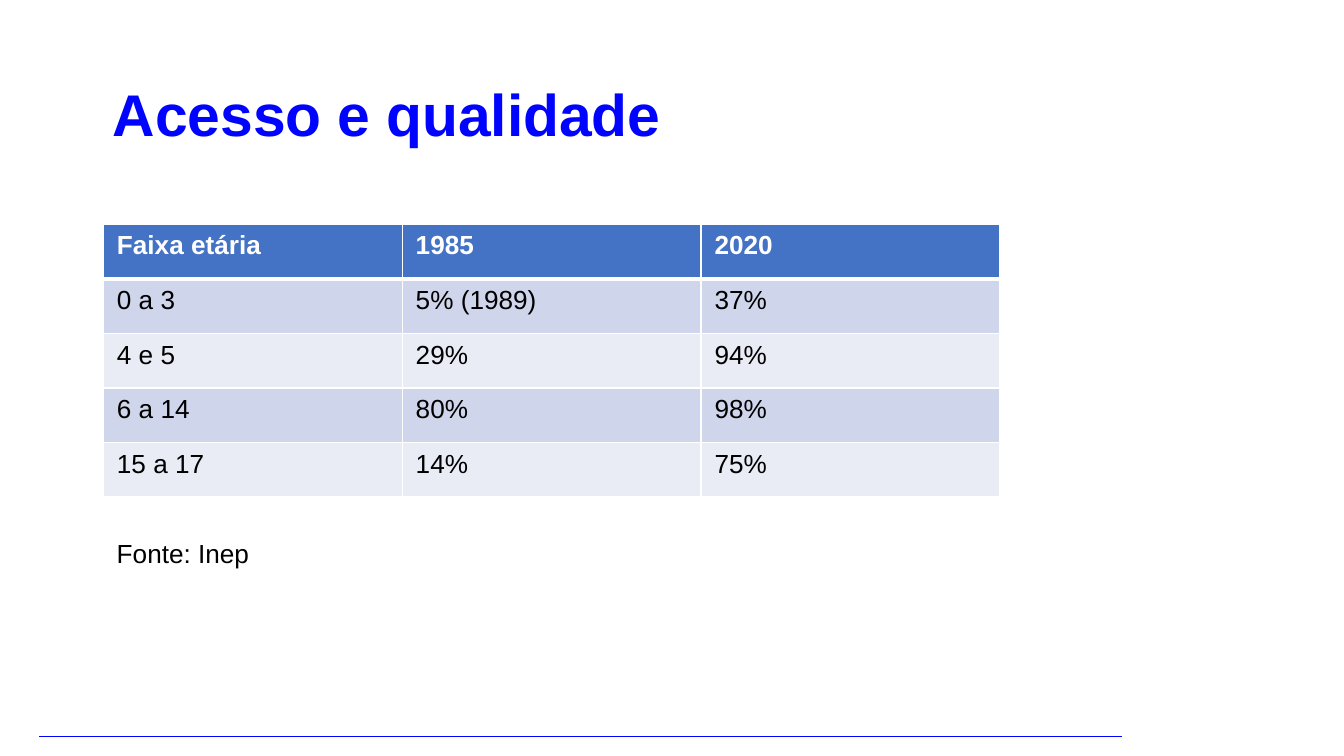
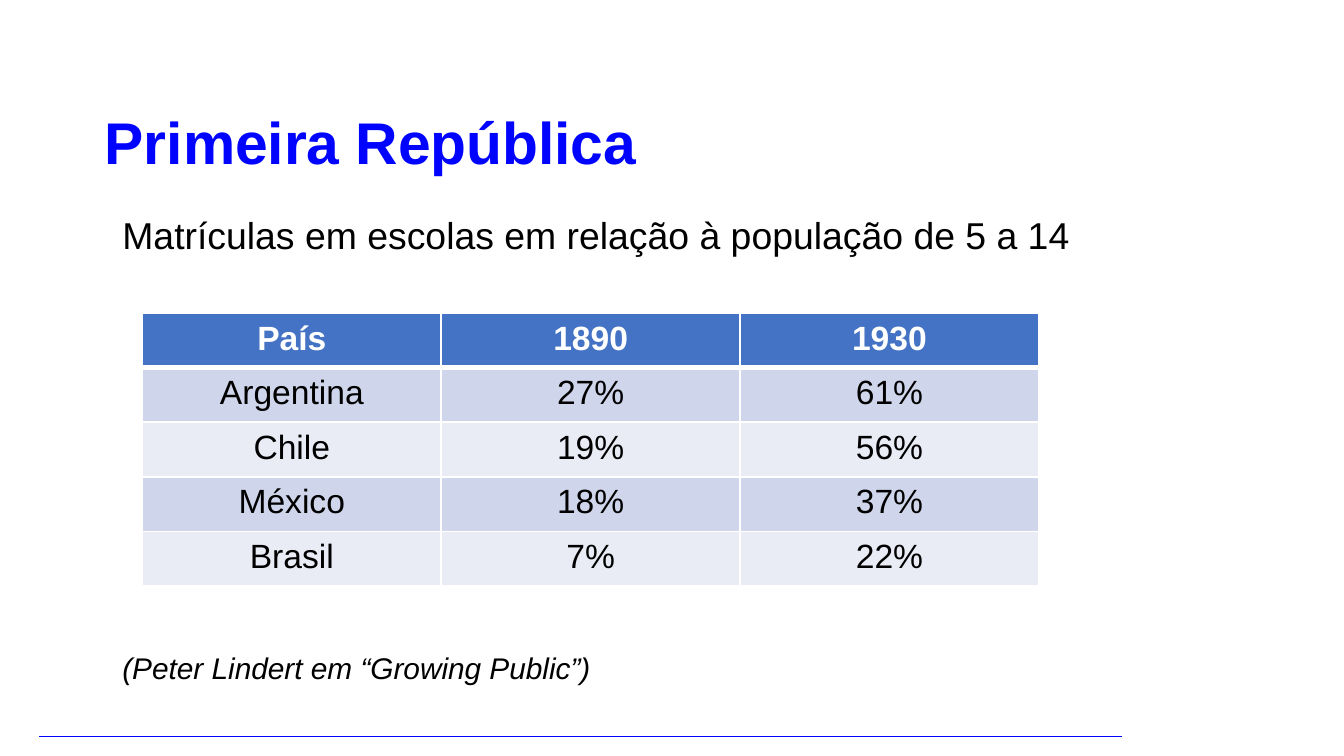
from lxml.etree import SubElement
from pptx import Presentation
from pptx.dml.color import RGBColor
from pptx.enum.shapes import MSO_CONNECTOR
from pptx.enum.text import MSO_ANCHOR, PP_ALIGN
from pptx.oxml.ns import qn
from pptx.util import Inches, Pt

FONT = "Arial"
INSET = 0.07
COLORS = {
    "accent": "0003FE",
    "header": "4472C4",
    "band_dark": "CFD5EA",
    "band_light": "E9EBF5",
    "white": "FFFFFF",
    "text": "000000",
}


def rgb(name):
    return RGBColor.from_string(COLORS[name])


def style(p, size, color="text", bold=False, italic=False):
    f = p.font
    f.name, f.size, f.bold, f.italic = FONT, Pt(size), bold, italic
    f.color.rgb = rgb(color)


def add_text_frame(s, box, inset=None, wrap=True):
    tf = s.shapes.add_textbox(*map(Inches, box)).text_frame
    tf.word_wrap = wrap
    if inset is not None:
        tf.margin_left = tf.margin_right = Inches(inset)
        tf.margin_top = tf.margin_bottom = Inches(inset)
    return tf


def add_footer_rule(s, left, right, y):
    line = s.shapes.add_connector(
        MSO_CONNECTOR.STRAIGHT, Inches(right), Inches(y), Inches(left), Inches(y))
    line.line.color.rgb = rgb("accent")
    line.line.width = Pt(0.75)
    SubElement(line._element.spPr, qn("a:effectLst"))


def add_title(s, text, left, top):
    tf = add_text_frame(s, (left, top, 7.9, 0.36), INSET)
    tf.vertical_anchor = MSO_ANCHOR.MIDDLE
    p = tf.paragraphs[0]
    p.text = text
    style(p, 31.5, "accent", bold=True)


def set_borders(cell, widths):
    """Draw white borders; widths maps L, R, T, B to points."""
    tcPr = cell._tc.get_or_add_tcPr()
    for i, (side, width) in enumerate(widths.items()):
        ln = tcPr.makeelement(qn(f"a:ln{side}"), {"w": str(int(Pt(width)))})
        fill = SubElement(ln, qn("a:solidFill"))
        SubElement(fill, qn("a:srgbClr"), val=COLORS["white"])
        tcPr.insert(i, ln)


def add_data_table(s, rows, box, size, align):
    table = s.shapes.add_table(len(rows), len(rows[0]), *map(Inches, box)).table
    for i, row in enumerate(rows):
        header = i == 0
        fill = "header" if header else ("band_light", "band_dark")[i % 2]
        for j, value in enumerate(row):
            cell = table.cell(i, j)
            cell.fill.solid()
            cell.fill.fore_color.rgb = rgb(fill)
            set_borders(cell, {"L": 1, "R": 1, "T": 3 if i == 1 else 1,
                               "B": 3 if header else 1})
            p = cell.text_frame.paragraphs[0]
            p.text = value
            p.alignment = align
            style(p, size, "white" if header else "text", bold=header)


def add_base_slide(prs, title, left, top):
    s = prs.slides.add_slide(prs.slide_layouts[6])
    add_footer_rule(s, 0.29, 8.35, 5.48)
    add_title(s, title, left, top)
    return s


def access_slide(prs):
    left = 0.77
    s = add_base_slide(prs, "Acesso e qualidade", left, 0.66)
    rows = [
        ("Faixa etária", "1985", "2020"),
        ("0 a 3", "5% (1989)", "37%"),
        ("4 e 5", "29%", "94%"),
        ("6 a 14", "80%", "98%"),
        ("15 a 17", "14%", "75%"),
    ]
    add_data_table(s, rows, (left, 1.67, 6.67, 2.03), 14, PP_ALIGN.LEFT)
    p = add_text_frame(s, (left, 3.95, 1.19, 0.34), wrap=False).paragraphs[0]
    p.text = "Fonte: Inep"
    style(p, 14)


def republic_slide(prs):
    s = add_base_slide(prs, "Primeira República", 0.71, 0.87)
    rows = [
        ("País", "1890", "1930"),
        ("Argentina", "27%", "61%"),
        ("Chile", "19%", "56%"),
        ("México", "18%", "37%"),
        ("Brasil", "7%", "22%"),
    ]
    add_data_table(s, rows, (1.06, 2.33, 6.67, 2.03), 18, PP_ALIGN.CENTER)
    tf = add_text_frame(s, (0.84, 1.49, 8.88, 3.86), INSET)
    tf.margin_top = Inches(0.09)
    p = tf.paragraphs[0]
    p.text = "Matrículas em escolas em relação à população de 5 a 14"
    style(p, 20)
    p = tf.add_paragraph()
    p.text = "(Peter Lindert em “Growing Public”)"
    p.space_before = Pt(210.5)  # leaves room for the table
    style(p, 16, italic=True)


def main():
    prs = Presentation()
    prs.slide_width, prs.slide_height = Inches(10), Inches(5.625)
    access_slide(prs)
    republic_slide(prs)
    prs.save("out.pptx")


if __name__ == "__main__":
    main()
